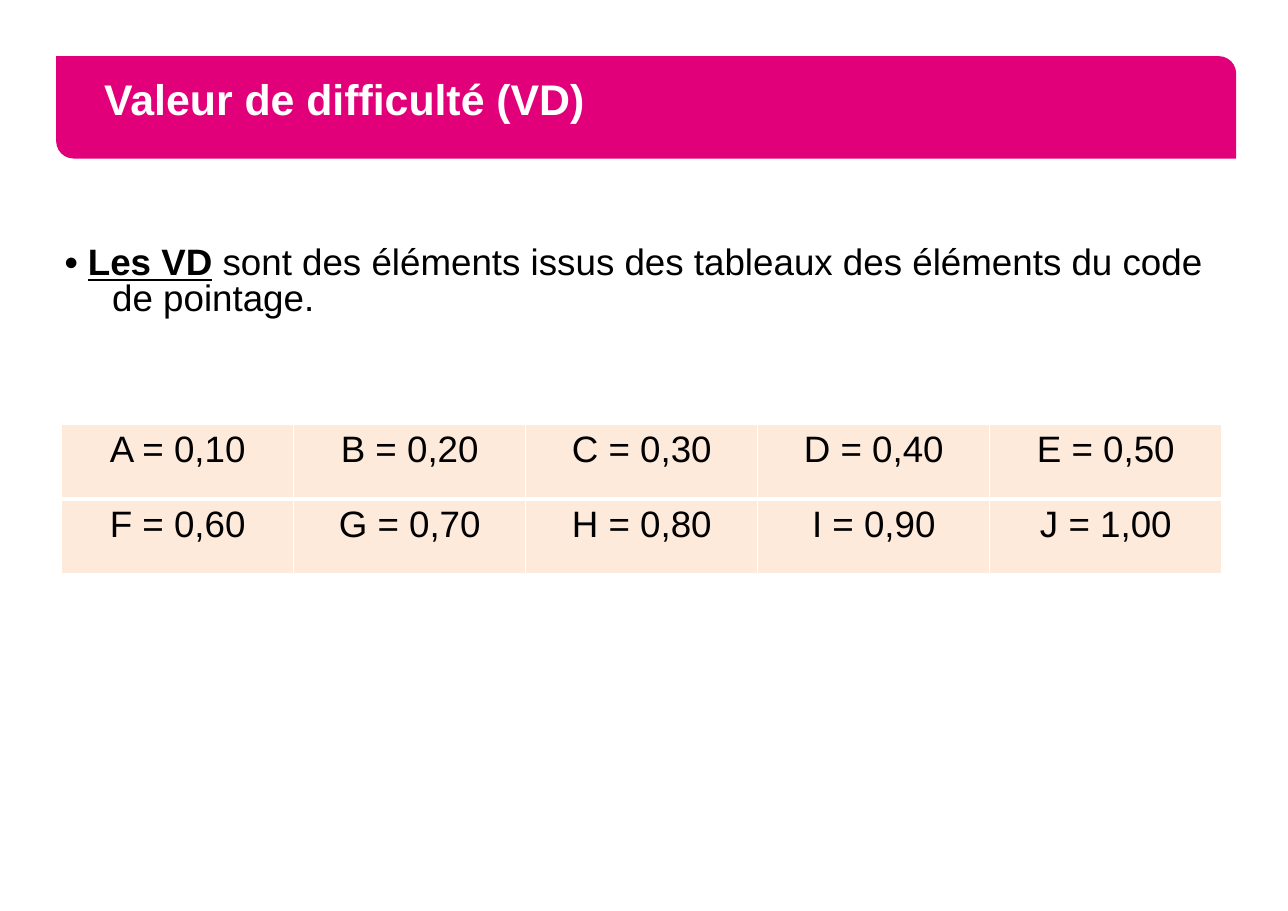
from lxml import etree
from pptx import Presentation
from pptx.dml.color import RGBColor
from pptx.enum.shapes import MSO_SHAPE
from pptx.enum.text import MSO_ANCHOR, PP_ALIGN
from pptx.oxml.ns import qn
from pptx.util import Inches, Pt

BANNER_SHAPE = MSO_SHAPE.ROUND_2_DIAG_RECTANGLE
MIDDLE, LEFT, CENTER = MSO_ANCHOR.MIDDLE, PP_ALIGN.LEFT, PP_ALIGN.CENTER

TITLE = "Valeur de difficulté (VD)"
# text, bold, underlined
STATEMENT = [
    ("• ", True, False),
    ("Les VD", True, True),
    (" sont des éléments issus des tableaux des éléments du code de pointage.",
     False, False),
]
VALUES = [
    ["A = 0,10", "B = 0,20", "C = 0,30", "D = 0,40", "E = 0,50"],
    ["F = 0,60", "G = 0,70", "H = 0,80", "I = 0,90", "J = 1,00"],
]
COLORS = {"banner": "E2007A", "white": "FFFFFF", "black": "000000", "cell": "FDEADA"}
FONT = "Arial"
BODY_SIZE = 24
HANGING = Inches(0.43)
ROW_HEIGHT = Inches(0.68)
THIN, THICK = 1, 3


def color(name):
    return RGBColor.from_string(COLORS[name])


def style_font(font, size, color_name):
    font.name = FONT
    font.size = Pt(size)
    font.color.rgb = color(color_name)


def add_banner(slide):
    banner = slide.shapes.add_shape(
        BANNER_SHAPE, Inches(0.51), Inches(0.51), Inches(10.71), Inches(0.93))
    banner.adjustments[0], banner.adjustments[1] = 0, 0.17
    banner.shadow.inherit = False
    banner.fill.solid()
    banner.fill.fore_color.rgb = color("banner")
    banner.line.fill.background()
    frame = banner.text_frame
    frame.word_wrap = True
    frame.vertical_anchor = MIDDLE
    frame.margin_left = frame.margin_right = Inches(0.39)
    paragraph = frame.paragraphs[0]
    paragraph.text = TITLE
    paragraph.alignment = LEFT
    paragraph.line_spacing = Pt(22)
    style_font(paragraph.font, 28, "white")
    paragraph.font.bold = True


def add_statement(slide):
    box = slide.shapes.add_textbox(
        Inches(0.49), Inches(2.2), Inches(10.6), Inches(0.9))
    box.text_frame.word_wrap = True
    paragraph = box.text_frame.paragraphs[0]
    paragraph.line_spacing = 0.8
    properties = paragraph._p.get_or_add_pPr()
    properties.set("marL", str(HANGING))
    properties.set("indent", str(-HANGING))
    style_font(paragraph.font, BODY_SIZE, "black")
    for text, bold, underlined in STATEMENT:
        run = paragraph.add_run()
        run.text = text
        run.font.bold = bold
        run.font.underline = underlined


def set_borders(cell, top, bottom):
    properties = cell._tc.get_or_add_tcPr()
    for side, width in (("L", THIN), ("R", THIN), ("T", top), ("B", bottom)):
        line = etree.SubElement(properties, qn(f"a:ln{side}"), w=str(Pt(width)))
        fill = etree.SubElement(line, qn("a:solidFill"))
        etree.SubElement(fill, qn("a:srgbClr"), val=COLORS["white"])


def add_values(slide):
    rows, columns = len(VALUES), len(VALUES[0])
    table = slide.shapes.add_table(
        rows, columns, Inches(0.56), Inches(3.85),
        Inches(10.53), ROW_HEIGHT * rows).table
    table.first_row = table.horz_banding = False
    for row_index, row in enumerate(VALUES):
        top = THICK if row_index == 1 else THIN
        bottom = THICK if row_index == 0 else THIN
        for column_index, text in enumerate(row):
            cell = table.cell(row_index, column_index)
            set_borders(cell, top, bottom)
            cell.fill.solid()
            cell.fill.fore_color.rgb = color("cell")
            paragraph = cell.text_frame.paragraphs[0]
            paragraph.text = text
            paragraph.alignment = CENTER
            style_font(paragraph.font, BODY_SIZE, "black")


def main():
    presentation = Presentation()
    presentation.slide_width = Inches(11.69)
    presentation.slide_height = Inches(8.27)
    slide = presentation.slides.add_slide(presentation.slide_layouts[6])
    add_banner(slide)
    add_statement(slide)
    add_values(slide)
    presentation.save("out.pptx")


if __name__ == "__main__":
    main()
